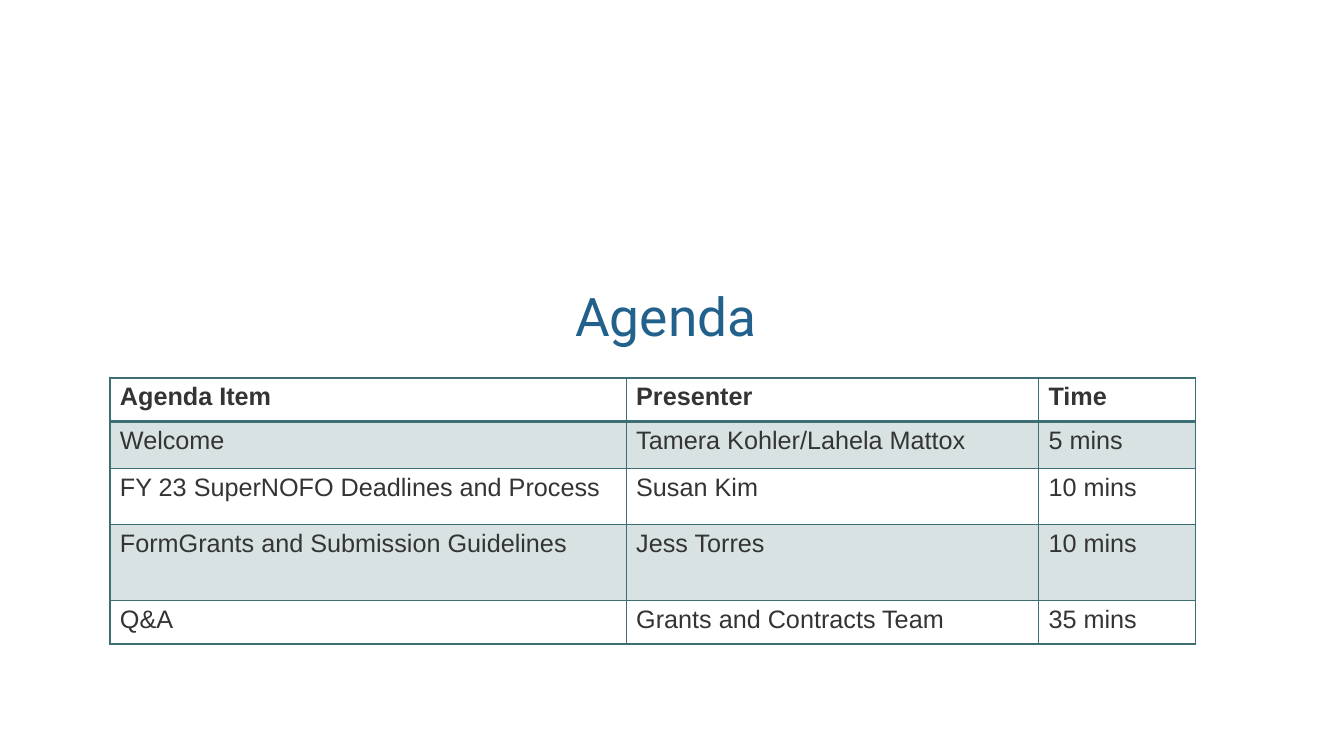
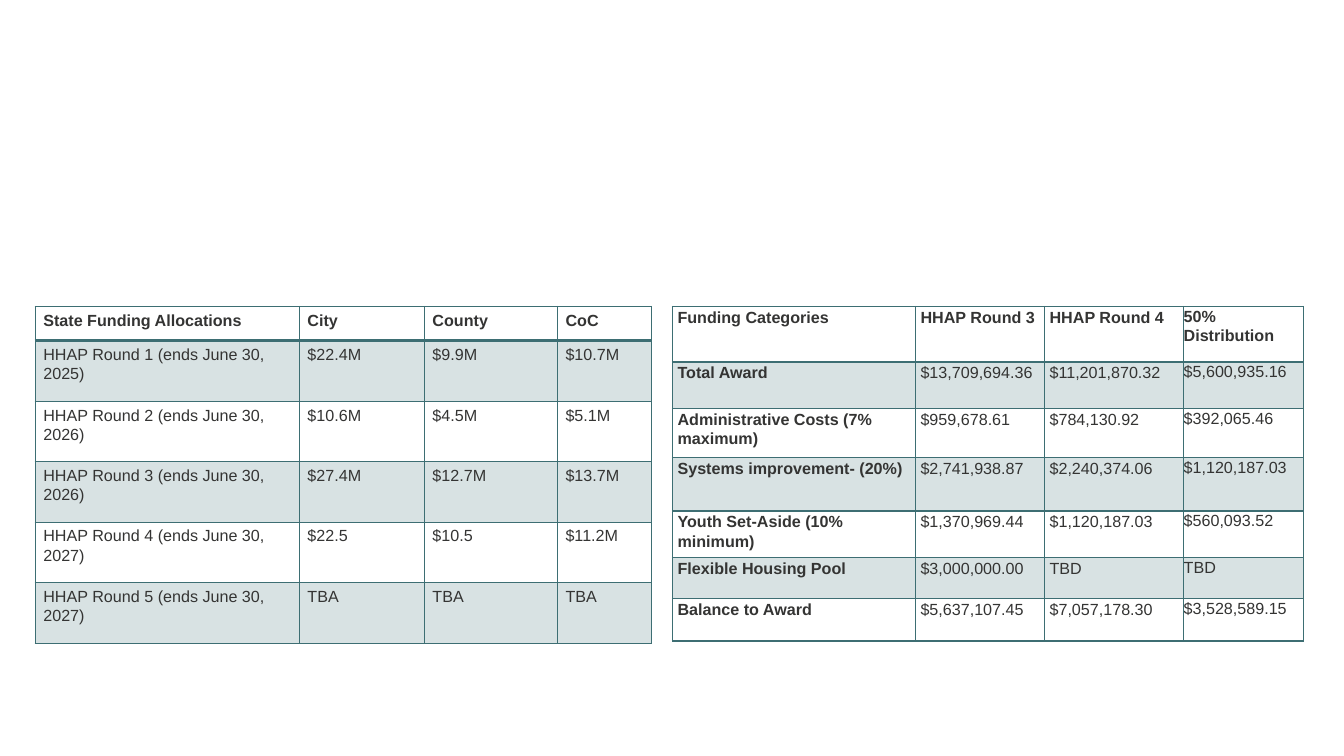
from lxml.etree import SubElement as Sub
from pptx import Presentation
from pptx.dml.color import RGBColor as RGB
from pptx.enum.text import MSO_ANCHOR as Anchor, PP_ALIGN as Align
from pptx.oxml import parse_xml
from pptx.oxml.ns import nsdecls, qn
from pptx.util import Pt

PX = 9144  # 100 px to the inch
BLUE = RGB(0x21, 0x61, 0x8B)
TEAL = RGB(0x3D, 0x6E, 0x73)
INK = RGB(0x34, 0x34, 0x33)

SIDES = ("left", "top", "right", "bottom")


def style(par, text, font, size, color, bold=False, gap=1.0, align=Align.LEFT):
    par.line_spacing, par.alignment = gap, align
    run = par.add_run()
    run.text = text
    look = {"name": font, "size": Pt(size), "bold": bold}
    for key, val in look.items():
        setattr(run.font, key, val)
    run.font.color.rgb = color


def grid(slide, left, top, cols, rows, data, size, pads, gap=1.0, lead=False):
    """Bordered table; pads holds one set of margins for each column."""
    frame = slide.shapes.add_table(
        len(rows), len(cols), left * PX, top * PX, sum(cols) * PX, sum(rows) * PX)
    table = frame.table
    table.horz_banding = False
    for col, wide in zip(table.columns, cols):
        col.width = wide * PX
    for r, (high, texts) in enumerate(zip(rows, data)):
        table.rows[r].height = high * PX
        for c, text in enumerate(texts):
            cell = table.cell(r, c)
            for side, pad in zip(SIDES, pads[c]):
                setattr(cell, "margin_" + side, pad * PX)
            bold = r == 0 or (lead and c == 0)
            style(cell.text_frame.paragraphs[0], text, "Arial", size, INK, bold, gap)

            # Tint every second row
            props = cell._tc.get_or_add_tcPr()
            if r % 2:
                cell.fill.solid()
                cell.fill.fore_color.rgb = TEAL
                tint = props.find(qn("a:solidFill"))[0]
                Sub(tint, qn("a:alpha"), val="20000")
            else:
                cell.fill.background()

            # Borders, with a heavier rule under the header
            for i, edge in enumerate("LRTB"):
                heavy = (r, edge) in ((0, "B"), (1, "T"))
                props.insert(i, parse_xml(
                    f'<a:ln{edge} {nsdecls("a")} w="{Pt(2 if heavy else 1)}">'
                    f'<a:solidFill><a:srgbClr val="{TEAL}"/></a:solidFill></a:ln{edge}>'))


deck = Presentation()
deck.slide_width, deck.slide_height = 1333 * PX, 750 * PX
blank = deck.slide_layouts[6]

# Slide 1: title
slide = deck.slides.add_slide(blank)
box = slide.shapes.add_textbox(147 * PX, 267 * PX, 1040 * PX, 83 * PX)
form = {"word_wrap": True, "vertical_anchor": Anchor.BOTTOM}
for key, val in form.items():
    setattr(box.text_frame, key, val)
style(box.text_frame.paragraphs[0], "Agenda ", "Roboto", 38, BLUE,
      gap=0.9, align=Align.CENTER)

# Slide 1: agenda
agenda = [
    ("Agenda Item", "Presenter", "Time"),
    ("Welcome", "Tamera Kohler/Lahela Mattox", "5 mins"),
    ("FY 23 SuperNOFO Deadlines and Process", "Susan Kim", "10 mins"),
    ("FormGrants and Submission Guidelines", "Jess Torres", "10 mins"),
    ("Q&A", "Grants and Contracts Team", "35 mins"),
]
grid(slide, 109, 375, [512, 409, 156], [43, 47, 55, 76, 43], agenda, 18,
     [(10, 5, 10, 5)] * 3)

# Slide 2: state funding
slide = deck.slides.add_slide(blank)
state = [
    ("State Funding Allocations", "City", "County", "CoC"),
    ("HHAP Round 1 (ends June 30, 2025)", "$22.4M", "$9.9M", "$10.7M"),
    ("HHAP Round 2 (ends June 30, 2026)", "$10.6M", "$4.5M", "$5.1M"),
    ("HHAP Round 3 (ends June 30, 2026)", "$27.4M", "$12.7M", "$13.7M"),
    ("HHAP Round 4 (ends June 30, 2027)", "$22.5", "$10.5", "$11.2M"),
    ("HHAP Round 5 (ends June 30, 2027)", "TBA", "TBA", "TBA"),
]
grid(slide, 35, 304, [262, 124, 132, 93], [34] + [60] * 5, state, 11.5,
     [(8, 4, 8, 4)] * 4, 1.07)

# Slide 2: funding categories
funds = [
    ("Funding Categories", "HHAP Round 3", "HHAP Round 4", "50% Distribution"),
    ("Total Award", "$13,709,694.36", "$11,201,870.32", "$5,600,935.16"),
    ("Administrative Costs (7% maximum)", "$959,678.61", "$784,130.92", "$392,065.46"),
    ("Systems improvement- (20%)", "$2,741,938.87", "$2,240,374.06", "$1,120,187.03"),
    ("Youth Set-Aside (10% minimum)", "$1,370,969.44", "$1,120,187.03", "$560,093.52"),
    ("Flexible Housing Pool", "$3,000,000.00", "TBD", "TBD"),
    ("Balance to Award", "$5,637,107.45", "$7,057,178.30", "$3,528,589.15"),
]
grid(slide, 667, 304, [241, 128, 138, 119], [55, 46, 49, 53, 46, 41, 42], funds, 11.5,
     [(5, 1, 5, 0)] * 3 + [(0, 0, 0, 0)], 1.07, lead=True)

deck.save("out.pptx")
